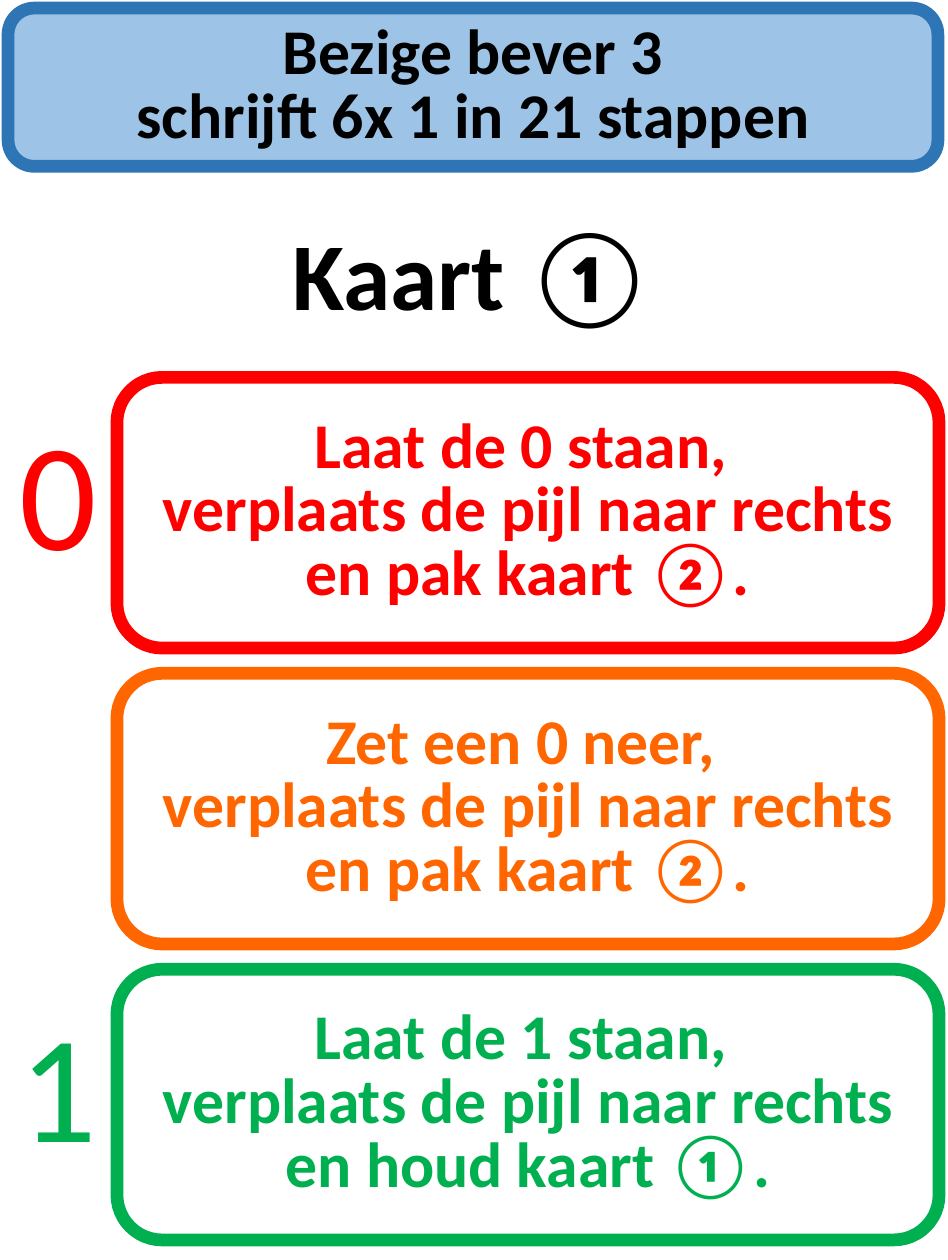
from pptx import Presentation
from pptx.dml.color import RGBColor
from pptx.enum import shapes, text
from pptx.util import Cm, Inches, Pt

BLACK = RGBColor(0x00, 0x00, 0x00)
RED = RGBColor(0xFF, 0x00, 0x00)
ORANGE = RGBColor(0xFF, 0x66, 0x00)
GREEN = RGBColor(0x00, 0xB0, 0x50)
LIGHT_BLUE = RGBColor(0x9D, 0xC3, 0xE6)
BLUE = RGBColor(0x2E, 0x75, 0xB6)

MARGIN, BANNER_WIDTH, BANNER_HEIGHT = 0.07, 8.11, 1.38
CARD_LEFT, CARD_TOP, CARD_WIDTH, CARD_HEIGHT = 1.02, 3.29, 7.17, 2.36
CARD_PITCH = 2.58

# Symbol read, colour, instruction
CARDS = [
    ("0", RED, "Laat de 0 staan, \nverplaats de pijl naar rechts\nen pak kaart ②."),
    ("", ORANGE, "Zet een 0 neer, \nverplaats de pijl naar rechts\nen pak kaart ②."),
    ("1", GREEN, "Laat de 1 staan, \nverplaats de pijl naar rechts\nen houd kaart ①."),
]


def write(frame, wording, size, color, bold=True, align=text.PP_ALIGN.CENTER, spacing=None):
    """Fill the frame with one paragraph; newlines become line breaks."""
    para = frame.paragraphs[0]
    para.text = wording
    para.alignment = align
    if spacing:
        para.line_spacing = Pt(spacing)
    for span in para.runs:
        span.font.color.rgb = color
        for name, value in {"name": "Calibri", "size": Pt(size), "bold": bold}.items():
            setattr(span.font, name, value)


def add_rounded_box(page, left, top, width, height, wording, color, line, fill=None):
    box = page.shapes.add_shape(
        shapes.MSO_SHAPE.ROUNDED_RECTANGLE,
        Inches(left), Inches(top), Inches(width), Inches(height))
    box.shadow.inherit = False
    box.line.color.rgb = line
    box.line.width = Pt(8)
    if fill is None:
        box.fill.background()
    else:
        box.fill.solid()
        box.fill.fore_color.rgb = fill
    box.text_frame.vertical_anchor = text.MSO_ANCHOR.MIDDLE
    write(box.text_frame, wording, 40, color, spacing=40)


def add_title(page, left, top, width, height):
    title = page.shapes.title
    place = {"left": left, "top": top, "width": width, "height": height}
    for name, value in place.items():
        setattr(title, name, Inches(value))
    frame = title.text_frame
    frame.auto_size = text.MSO_AUTO_SIZE.NONE
    frame.vertical_anchor = text.MSO_ANCHOR.MIDDLE
    write(frame, "Kaart ①", 60, BLACK)


def add_symbol(page, left, top, width, height, symbol, color):
    box = page.shapes.add_textbox(Inches(left), Inches(top), Inches(width), Inches(height))
    box.text_frame.word_wrap = False
    box.text_frame.auto_size = text.MSO_AUTO_SIZE.SHAPE_TO_FIT_TEXT
    write(box.text_frame, symbol, 96, color, bold=False, align=text.PP_ALIGN.LEFT)


def add_card(page, left, top, width, height, symbol, color, instruction):
    """Place an instruction box, with the symbol it answers to on its left."""
    add_rounded_box(page, left, top, width, height, instruction, color, color)
    if symbol:
        add_symbol(page, left - 0.95, top + 0.13, 0.9, 1.72, symbol, color)


def set_page_size(deck):
    """Set the metric page size and drop the template's 4:3 screen label."""
    deck.slide_width, deck.slide_height = Cm(21), Cm(27.9)
    deck.element.sldSz.attrib.pop("type", None)


def main():
    deck = Presentation()
    set_page_size(deck)
    page = deck.slides.add_slide(deck.slide_layouts.get_by_name("Title Only"))
    add_rounded_box(page, MARGIN, MARGIN, BANNER_WIDTH, BANNER_HEIGHT,
                    "Bezige bever 3\nschrijft 6x 1 in 21 stappen", BLACK, BLUE, LIGHT_BLUE)
    add_title(page, MARGIN, 1.68, BANNER_WIDTH, BANNER_HEIGHT)
    for row, card in enumerate(CARDS):
        add_card(page, CARD_LEFT, CARD_TOP + row * CARD_PITCH, CARD_WIDTH, CARD_HEIGHT, *card)
    deck.save("out.pptx")


if __name__ == "__main__":
    main()
